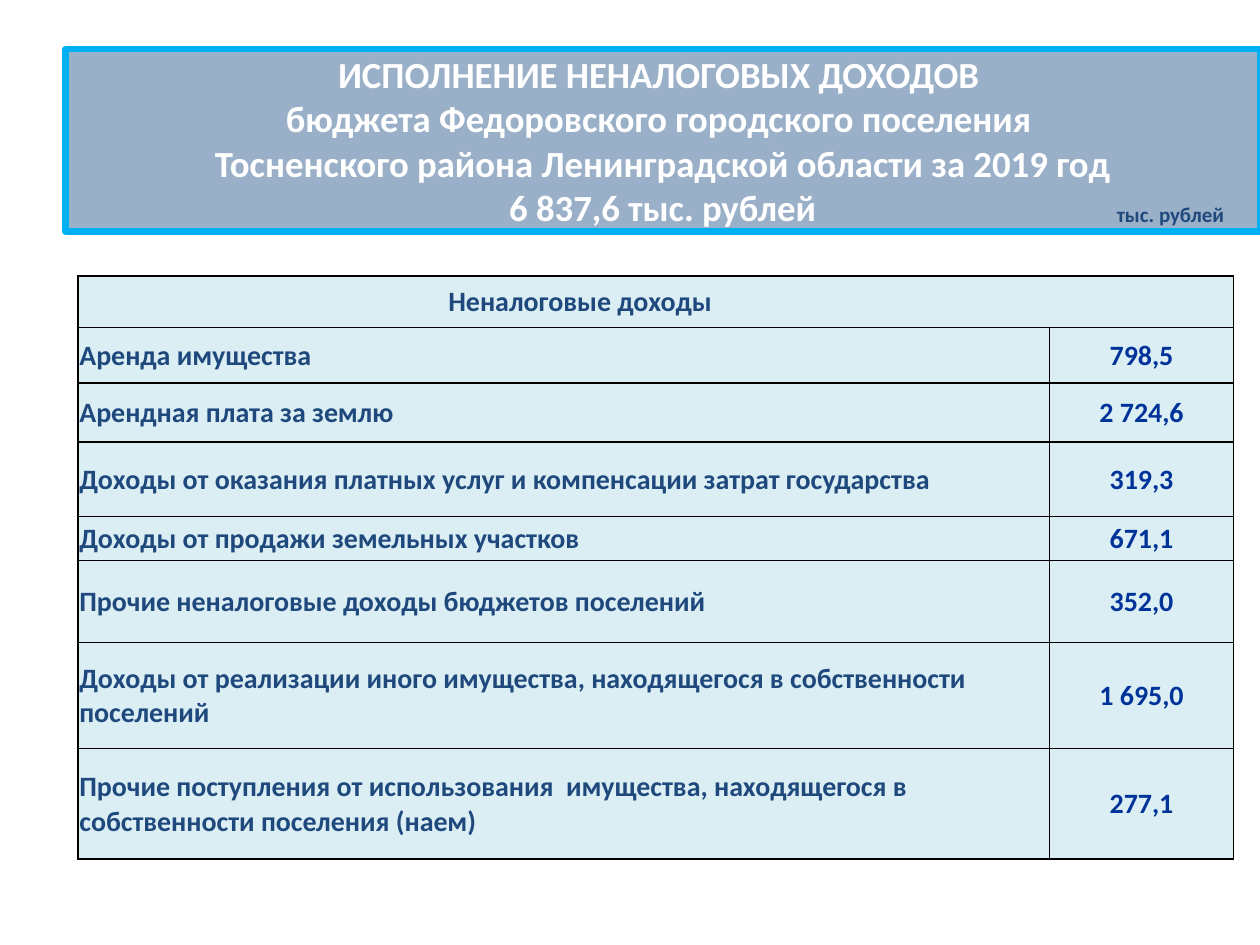
from copy import deepcopy

from lxml.etree import SubElement as Sub
from pptx import Presentation
from pptx.dml.color import RGBColor as RGB
from pptx.enum.text import MSO_ANCHOR as Anchor, MSO_AUTO_SIZE as Fit, PP_ALIGN as Align
from pptx.oxml import parse_xml
from pptx.oxml.ns import nsdecls, qn
from pptx.util import Inches, Pt

THEME = {
    "font": "Calibri",
    "white": "FFFFFF", "navy": "1F497D", "blue": "003399",
    "band": "376092", "edge": "00B0F0", "cell": "DBEEF4", "rule": "000000",
    "head": 21, "body": 16, "note": 12,
}


def write(frame, text, size="body", color="navy", align=Align.LEFT):
    par = frame.paragraphs[0]
    par.text = text
    par.alignment = align
    for run in par.runs:
        font = run.font
        font.name, font.size, font.bold = THEME["font"], Pt(THEME[size]), True
        font.color.rgb = RGB.from_string(THEME[color])
    # Line breaks take the type size of the text around them
    for gap in par._p.findall(qn("a:br")):
        gap.append(deepcopy(par.runs[0]._r.rPr))


def fill(thing, color):
    thing.fill.solid()
    thing.fill.fore_color.rgb = RGB.from_string(THEME[color])


deck = Presentation()
deck.slide_width, deck.slide_height = Inches(10), Inches(7.5)
wide, high = deck.slide_width, deck.slide_height
slide = deck.slides.add_slide(deck.slide_layouts[5])

# Title band, half transparent, running to the right edge
title = slide.shapes.title
title.left, title.top = int(wide * 0.052), int(high * 0.052)
title.width, title.height = wide - title.left, int(high * 0.193)
fill(title, "band")
tint = title.fill._xPr.find(qn("a:solidFill"))[0]
Sub(tint, qn("a:alpha"), val="50000")
title.line.color.rgb = RGB.from_string(THEME["edge"])
title.line.width = Pt(3.5)
frame = title.text_frame
frame.auto_size, frame.word_wrap = Fit.NONE, True
frame.vertical_anchor = Anchor.MIDDLE
write(frame, "ИСПОЛНЕНИЕ НЕНАЛОГОВЫХ ДОХОДОВ \v"
      "бюджета Федоровского городского поселения \v"
      "Тосненского района Ленинградской области за 2019 год\v"
      "6 837,6 тыс. рублей", size="head", color="white", align=Align.CENTER)

# Income table
rows = [
    ("Неналоговые доходы", "", 0.41),
    ("Аренда имущества", "798,5", 0.44),
    ("Арендная плата за землю", "2 724,6", 0.47),
    ("Доходы от оказания платных услуг и компенсации затрат государства", "319,3", 0.59),
    ("Доходы от продажи земельных участков", "671,1", 0.35),
    ("Прочие неналоговые доходы бюджетов поселений", "352,0", 0.65),
    ("Доходы от реализации иного имущества, находящегося в собственности поселений",
     "1 695,0", 0.84),
    ("Прочие поступления от использования  имущества, находящегося в "
     "собственности поселения (наем)", "277,1", 0.88),
]
tall = Inches(sum(row[2] for row in rows))
grid = slide.shapes.add_table(len(rows), 2, int(wide * 0.062), int(high * 0.292),
                              int(wide * 0.917), tall).table
grid.first_row = grid.horz_banding = False
for col, share in zip(grid.columns, (0.771, 0.146)):
    col.width = int(wide * share)

for r, (name, value, size) in enumerate(rows):
    grid.rows[r].height = Inches(size)
    for c, text in enumerate((name, value)):
        cell = grid.cell(r, c)
        cell.vertical_anchor = Anchor.MIDDLE
        cell.margin_left = cell.margin_right = cell.margin_top = Inches(0.01)
        cell.margin_bottom = 0
        for side in "LRTB":
            cell._tc.get_or_add_tcPr().append(parse_xml(
                f'<a:ln{side} {nsdecls("a")} w="{Pt(1)}"><a:solidFill>'
                f'<a:srgbClr val="{THEME["rule"]}"/></a:solidFill></a:ln{side}>'))
        fill(cell, "cell")
        if text:
            write(cell.text_frame, text, color="blue" if c else "navy",
                  align=Align.CENTER if c or r == 0 else Align.LEFT)

# The heading spans both columns and sits left of centre
top = grid.cell(0, 0)
top.merge(grid.cell(0, 1))
top.margin_right = Inches(1.21)

# Unit note
note = slide.shapes.add_textbox(int(wide * 0.858), int(high * 0.207),
                                int(wide * 0.142), int(high * 0.04)).text_frame
note.word_wrap, note.auto_size = True, Fit.SHAPE_TO_FIT_TEXT
write(note, "тыс. рублей", size="note", align=Align.CENTER)

deck.save("out.pptx")
